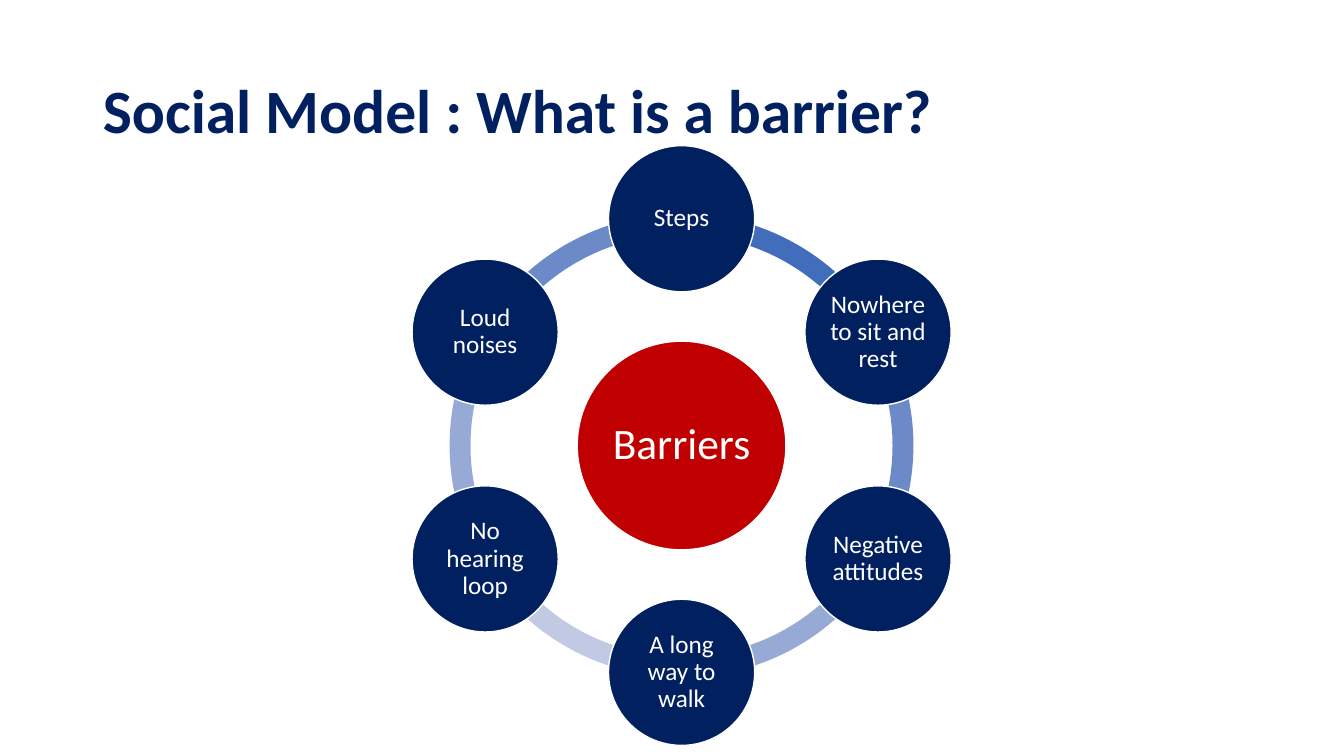
from math import cos, radians, sin

from pptx import Presentation
from pptx.dml.color import RGBColor
from pptx.enum.shapes import MSO_SHAPE
from pptx.enum.text import MSO_ANCHOR, PP_ALIGN
from pptx.util import Inches, Pt

COLORS = {"navy": "002060", "red": "C00000", "white": "FFFFFF"}
CENTER_X, CENTER_Y = 6.76, 4.42
ORBIT_RADIUS = 2.25
RING_SIZE = 4.6
RING_THICKNESS = 0.045
# Arc adjustments count 0.6 units to a degree
FULL_TURN = 216
TOP = 162

# Each barrier, clockwise from the top, with the colour of the arc that follows it
BARRIERS = [
    ("Steps", "416DBB"),
    ("Nowhere to sit and rest", "6C8AC8"),
    ("Negative attitudes", "97A9D5"),
    ("A long way to walk", "C1C9E4"),
    ("No hearing loop", "97A9D5"),
    ("Loud noises", "6C8AC8"),
]


def write_text(shape, text, size, color, bold=False, align=PP_ALIGN.CENTER, inset=0.03):
    frame = shape.text_frame
    frame.word_wrap = True
    frame.vertical_anchor = MSO_ANCHOR.MIDDLE
    frame.margin_left = frame.margin_right = Inches(inset)
    frame.margin_top = frame.margin_bottom = Inches(inset)
    paragraph = frame.paragraphs[0]
    paragraph.alignment = align
    paragraph.line_spacing = 0.9
    run = paragraph.add_run()
    run.text = text
    run.font.name = "Calibri"
    run.font.size = Pt(size)
    run.font.bold = bold
    run.font.color.rgb = RGBColor.from_string(color)


def add_centered_shape(preset, x, y, size, fill, outlined=True):
    """Add a square-framed preset shape with its centre at x, y."""
    shape = slide.shapes.add_shape(
        preset, Inches(x - size / 2), Inches(y - size / 2), Inches(size), Inches(size)
    )
    shape.shadow.inherit = False
    shape.fill.solid()
    shape.fill.fore_color.rgb = RGBColor.from_string(fill)
    if outlined:
        shape.line.color.rgb = RGBColor.from_string(COLORS["white"])
        shape.line.width = Pt(1)
    else:
        shape.line.fill.background()
    return shape


presentation = Presentation()
presentation.slide_width = Inches(13.33)
presentation.slide_height = Inches(7.5)
slide = presentation.slides.add_slide(presentation.slide_layouts[5])

title = slide.shapes.title
title.left, title.top = Inches(0.92), Inches(0.4)
title.width, title.height = Inches(11.5), Inches(1.45)
write_text(title, "Social Model : What is a barrier?", 44, COLORS["navy"],
           bold=True, align=PP_ALIGN.LEFT, inset=0.1)

step = FULL_TURN / len(BARRIERS)
for index, (_, arc_color) in enumerate(BARRIERS):
    arc = add_centered_shape(MSO_SHAPE.BLOCK_ARC, CENTER_X, CENTER_Y, RING_SIZE,
                             arc_color, outlined=False)
    arc.adjustments[0] = (TOP + step * index) % FULL_TURN
    arc.adjustments[1] = (TOP + step * (index + 1)) % FULL_TURN
    arc.adjustments[2] = RING_THICKNESS

hub = add_centered_shape(MSO_SHAPE.OVAL, CENTER_X, CENTER_Y, 2.07, COLORS["red"])
write_text(hub, "Barriers", 31, COLORS["white"], inset=0.04)

for index, (label, _) in enumerate(BARRIERS):
    angle = radians(360 / len(BARRIERS) * index - 90)
    circle = add_centered_shape(
        MSO_SHAPE.OVAL,
        CENTER_X + ORBIT_RADIUS * cos(angle),
        CENTER_Y + ORBIT_RADIUS * sin(angle),
        1.45, COLORS["navy"],
    )
    write_text(circle, label, 18, COLORS["white"])

presentation.save("out.pptx")
